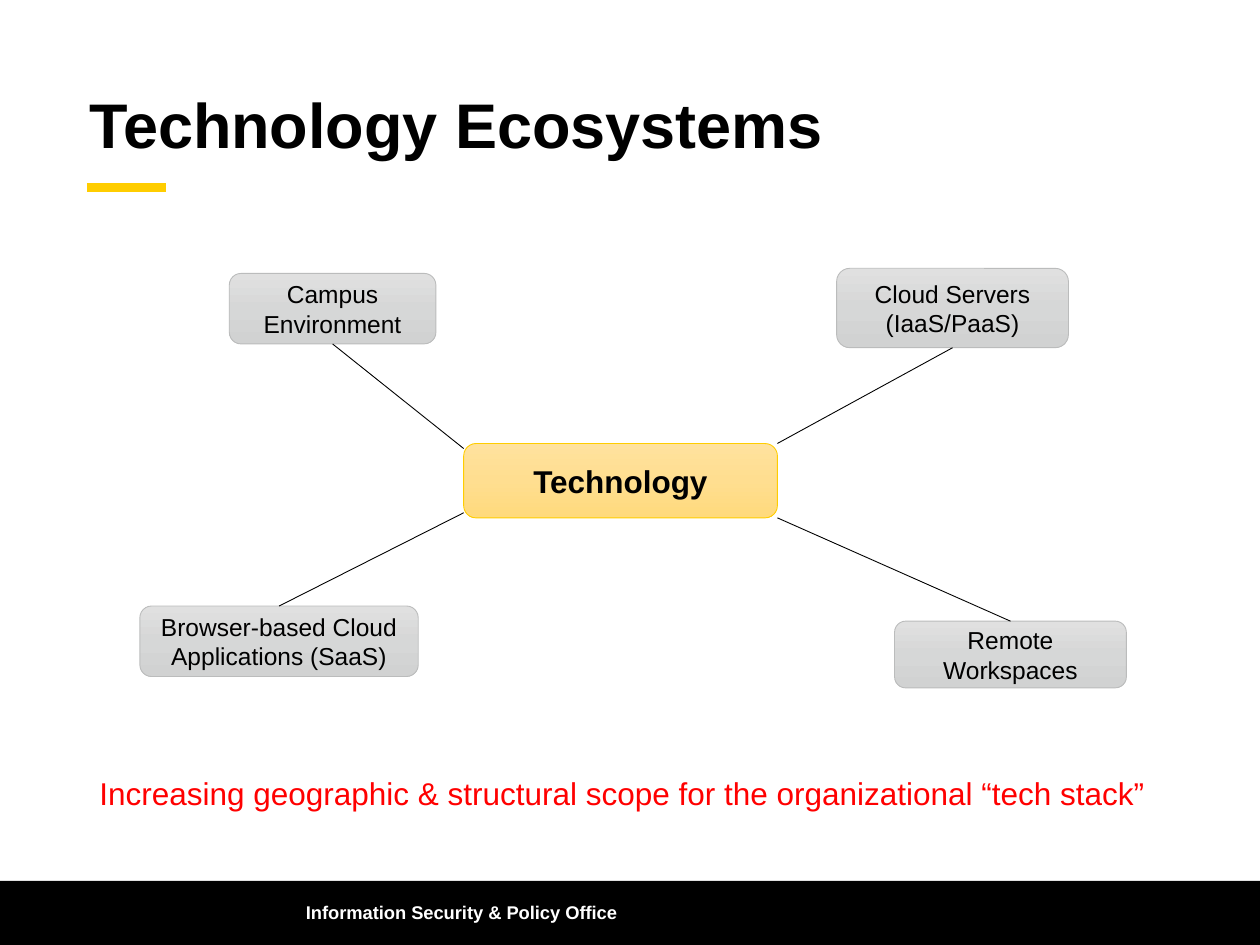
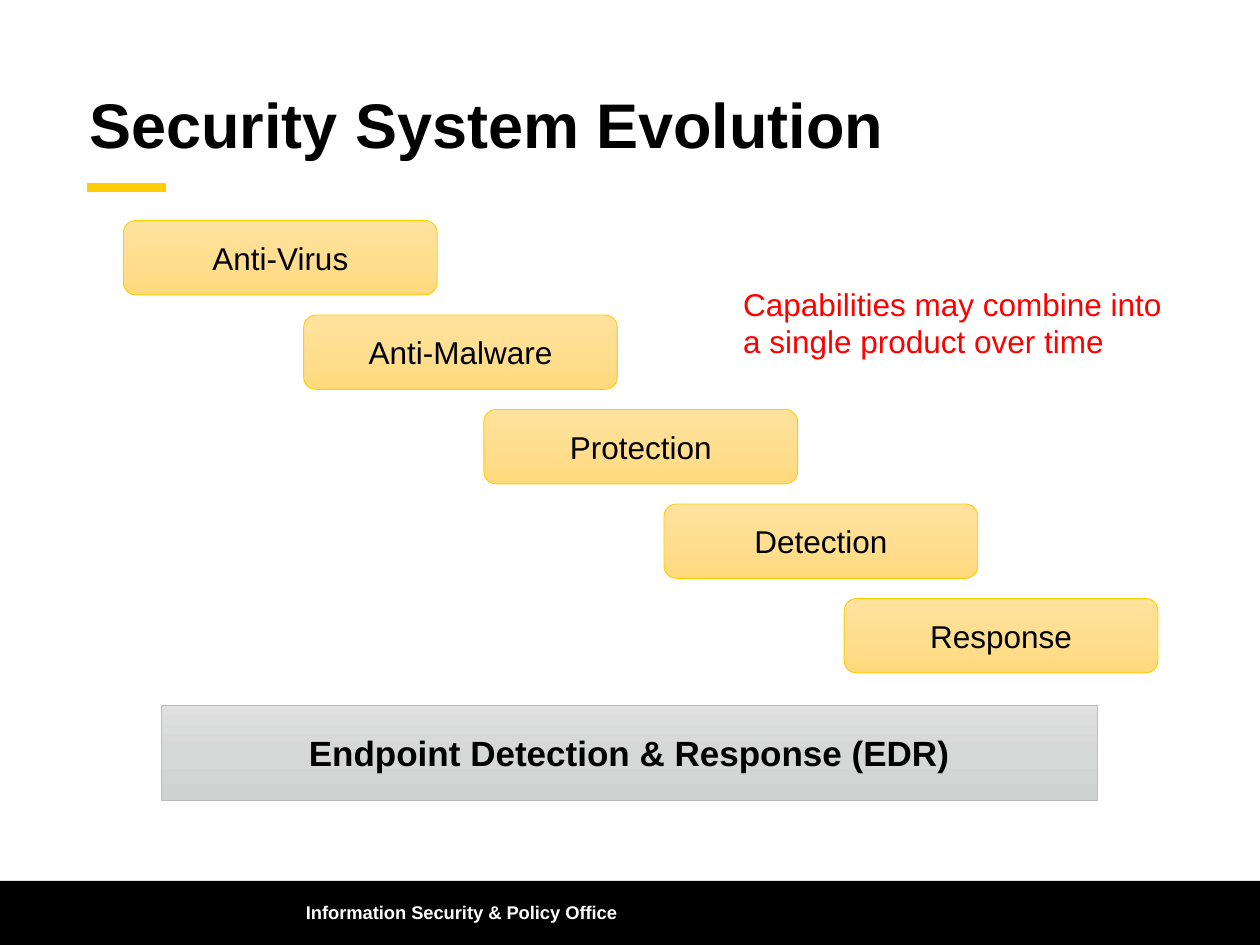
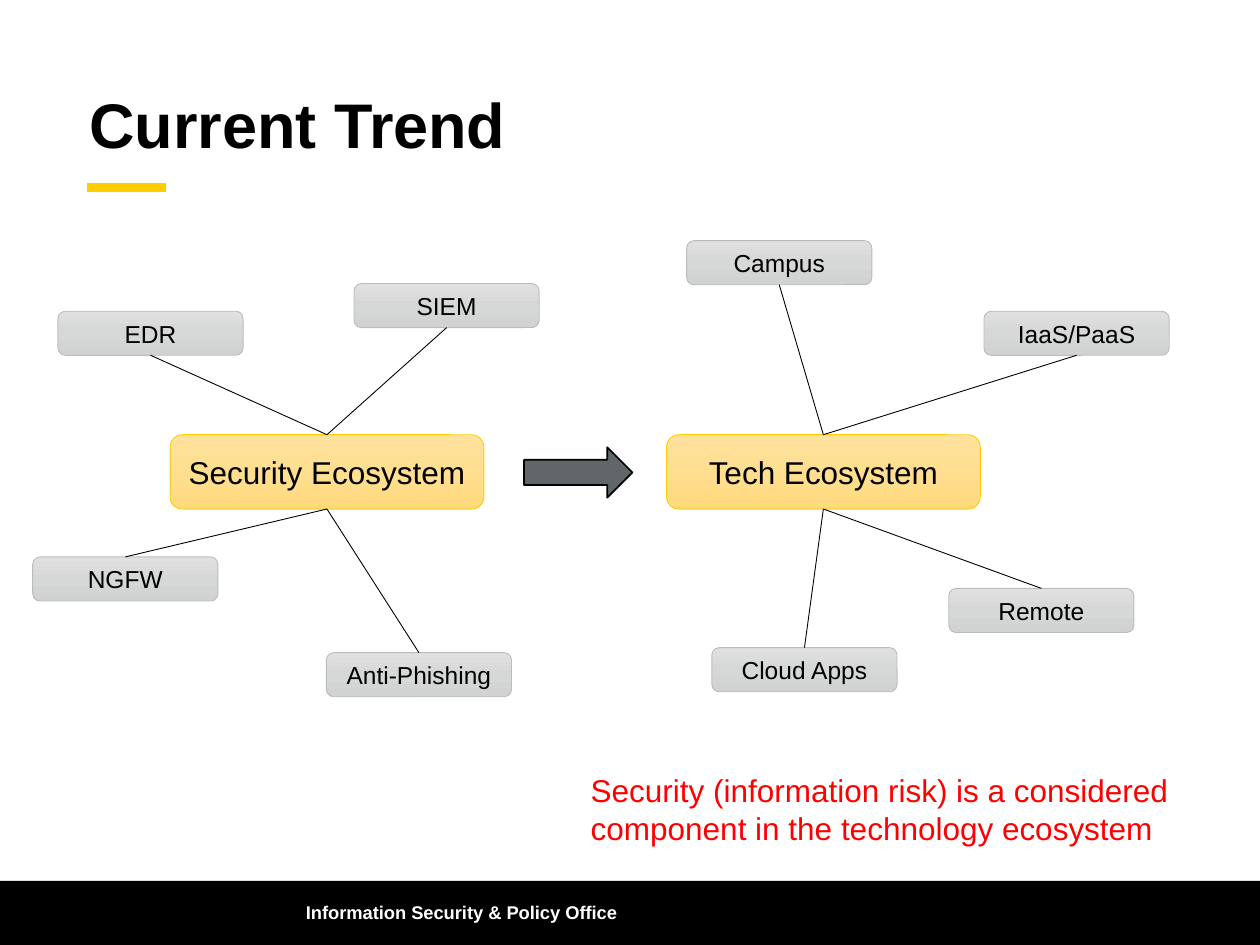
from copy import deepcopy

from pptx import Presentation
from pptx.dml.color import RGBColor as RGB
from pptx.enum.shapes import MSO_CONNECTOR as LINK, MSO_SHAPE as SHAPE
from pptx.enum.text import MSO_ANCHOR as ANCHOR, PP_ALIGN as ALIGN
from pptx.oxml.ns import qn
from pptx.oxml.xmlchemy import OxmlElement
from pptx.util import Inches, Pt

FONT = "Arial"
BLACK = RGB(0x00, 0x00, 0x00)
WHITE = RGB(0xFF, 0xFF, 0xFF)
RED = RGB(0xFF, 0x00, 0x00)
GOLD = RGB(0xFF, 0xCD, 0x00)
SILVER = RGB(0xBB, 0xBC, 0xBC)
SLATE = RGB(0x61, 0x66, 0x69)
GOLD_FADE = [RGB(0xFF, 0xE2, 0x9E), RGB(0xFF, 0xDE, 0x90), RGB(0xFF, 0xDA, 0x7C)]
GREY_FADE = [RGB(0xE0, 0xE0, 0xE0), RGB(0xD6, 0xD7, 0xD7), RGB(0xD1, 0xD2, 0xD2)]

WIDE, HIGH = 10, 7.5
BAND_TOP = 6.99
HUB = (2.49, 0.59)
NODE = (1.47, 0.35)
FOOTER = "Information Security & Policy Office"

# Nodes on slide 1: text, box, where the link leaves the hub
# (share of its width, inset from its top or bottom)
TECH_HUB = (3.68, 3.52, *HUB)
TECH_NODES = [
    ("Browser-based Cloud Applications (SaaS)", (1.11, 4.81, 2.21, 0.56), (0, 0.04)),
    ("Remote Workspaces", (7.1, 4.93, 1.84, 0.53), (1, 0)),
    ("Cloud Servers\n(IaaS/PaaS)", (6.64, 2.13, 1.84, 0.63), (1, 0)),
    ("Campus Environment", (1.82, 2.17, 1.64, 0.56), (0, 0.04)),
]
TECH_NOTE = "Increasing geographic & structural scope for the organizational “tech stack”"

STEPS = ["Anti-Virus", "Anti-Malware", "Protection", "Detection", "Response"]
STEP_START, STEP_MOVE = (0.98, 1.75), (1.43, 0.75)
STEP_SUM = "Endpoint Detection & Response (EDR)"
STEP_NOTE = "Capabilities may combine into a single product over time"

TREND = [
    ("Security Ecosystem", (1.35, 3.45), [
        ("EDR", (0.46, 2.47)), ("SIEM", (2.81, 2.25)),
        ("NGFW", (0.26, 4.42)), ("Anti-Phishing", (2.59, 5.18))]),
    ("Tech Ecosystem", (5.29, 3.45), [
        ("Cloud Apps", (5.65, 5.14)), ("Remote", (7.53, 4.67)),
        ("IaaS/PaaS", (7.81, 2.47)), ("Campus", (5.45, 1.91))]),
]
TREND_NOTE = ("Security (information risk) is a considered component "
              "in the technology ecosystem")


def write(shape, text, size, color=BLACK, bold=False, align=ALIGN.LEFT,
          anchor=ANCHOR.MIDDLE, space=1.0):
    frame = shape.text_frame
    frame.word_wrap = True
    frame.vertical_anchor = anchor
    frame.text = text
    for para in frame.paragraphs:
        para.alignment = align
        para.line_spacing = space
        font = para.font
        font.name, font.size, font.bold = FONT, Pt(size), bold
        font.color.rgb = color


def add_text(slide, box, text, size, **style):
    write(slide.shapes.add_textbox(*map(Inches, box)), text, size, **style)


def add_note(slide, box, text):
    add_text(slide, box, text, 18, color=RED, anchor=ANCHOR.TOP)


def add_shape(slide, kind, box):
    shape = slide.shapes.add_shape(kind, *map(Inches, box))
    shape.shadow.inherit = False
    return shape


def fade(fill, shape, colors):
    """Fill from top to bottom with three evenly spaced colours."""
    fill.gradient()
    fill.gradient_angle = 270
    stops = next(shape._element.iter(qn("a:gsLst")))
    stops.insert(1, deepcopy(stops[0]))
    for i, (stop, color) in enumerate(zip(fill.gradient_stops, colors)):
        stop.position = i / 2
        stop.color.rgb = color


def add_box(slide, box, text, size, colors, edge, bold=False,
            kind=SHAPE.ROUNDED_RECTANGLE):
    shape = add_shape(slide, kind, box)
    fade(shape.fill, shape, colors)
    shape.line.color.rgb = edge
    shape.line.width = Pt(0.5)
    write(shape, text, size, bold=bold, align=ALIGN.CENTER)


def add_hub(slide, box, text, bold=False):
    add_box(slide, box, text, 18, GOLD_FADE, GOLD, bold)


def add_node(slide, box, text):
    add_box(slide, box, text, 14, GREY_FADE, SILVER)


def add_line(slide, start, end, color=BLACK, width=0.5):
    line = slide.shapes.add_connector(LINK.STRAIGHT, *map(Inches, (*start, *end)))
    line.line.color.rgb = color
    line.line.width = Pt(width)
    line._element.spPr.append(OxmlElement("a:effectLst"))


def join(slide, hub, node, share=0.5, inset=0):
    """Link a hub to the middle of the node edge that faces it."""
    x, y, w, h = hub
    left, top, wide, high = node
    above = top < y
    start = (x + share * w, y + inset if above else y + h - inset)
    add_line(slide, start, (left + wide / 2, top + high if above else top))


def add_slide(deck, title):
    slide = deck.slides.add_slide(deck.slide_layouts[6])
    band = add_shape(slide, SHAPE.RECTANGLE, (0, BAND_TOP, WIDE, HIGH - BAND_TOP))
    band.fill.solid()
    band.fill.fore_color.rgb = BLACK
    band.line.fill.background()
    add_line(slide, (0.69, 1.49), (1.32, 1.49), GOLD, 5)
    add_text(slide, (0.61, 0.54, 8.62, 0.95), title, 36, bold=True, space=0.9)
    add_text(slide, (2.33, 7.04, 6.86, 0.4), FOOTER, 10.5, color=WHITE, bold=True)
    return slide


def tech_slide(deck):
    slide = add_slide(deck, "Technology Ecosystems")
    add_note(slide, (0.69, 6.09, 8.62, 0.4), TECH_NOTE)
    add_hub(slide, TECH_HUB, "Technology", bold=True)
    for text, box, (share, inset) in TECH_NODES:
        add_node(slide, box, text)
        join(slide, TECH_HUB, box, share, inset)


def step_slide(deck):
    slide = add_slide(deck, "Security System Evolution")
    (x, y), (dx, dy) = STEP_START, STEP_MOVE
    for i, text in enumerate(STEPS):
        add_hub(slide, (x + i * dx, y + i * dy, *HUB), text)
    add_box(slide, (1.28, 5.6, 7.43, 0.75), STEP_SUM, 20, GREY_FADE, SILVER,
            bold=True, kind=SHAPE.RECTANGLE)
    add_note(slide, (5.8, 2.21, 3.59, 0.71), STEP_NOTE)


def trend_slide(deck):
    slide = add_slide(deck, "Current Trend")
    for name, spot, nodes in TREND:
        hub = (*spot, *HUB)
        add_hub(slide, hub, name)
        for text, place in nodes:
            box = (*place, *NODE)
            add_node(slide, box, text)
            join(slide, hub, box)
    arrow = add_shape(slide, SHAPE.RIGHT_ARROW, (4.16, 3.55, 0.86, 0.4))
    arrow.fill.solid()
    arrow.fill.fore_color.rgb = SLATE
    arrow.line.color.rgb = BLACK
    arrow.line.width = Pt(1)
    add_note(slide, (4.59, 6.07, 5.04, 0.71), TREND_NOTE)


def main():
    deck = Presentation()
    deck.slide_width, deck.slide_height = Inches(WIDE), Inches(HIGH)
    for build in (tech_slide, step_slide, trend_slide):
        build(deck)
    deck.save("out.pptx")


if __name__ == "__main__":
    main()
